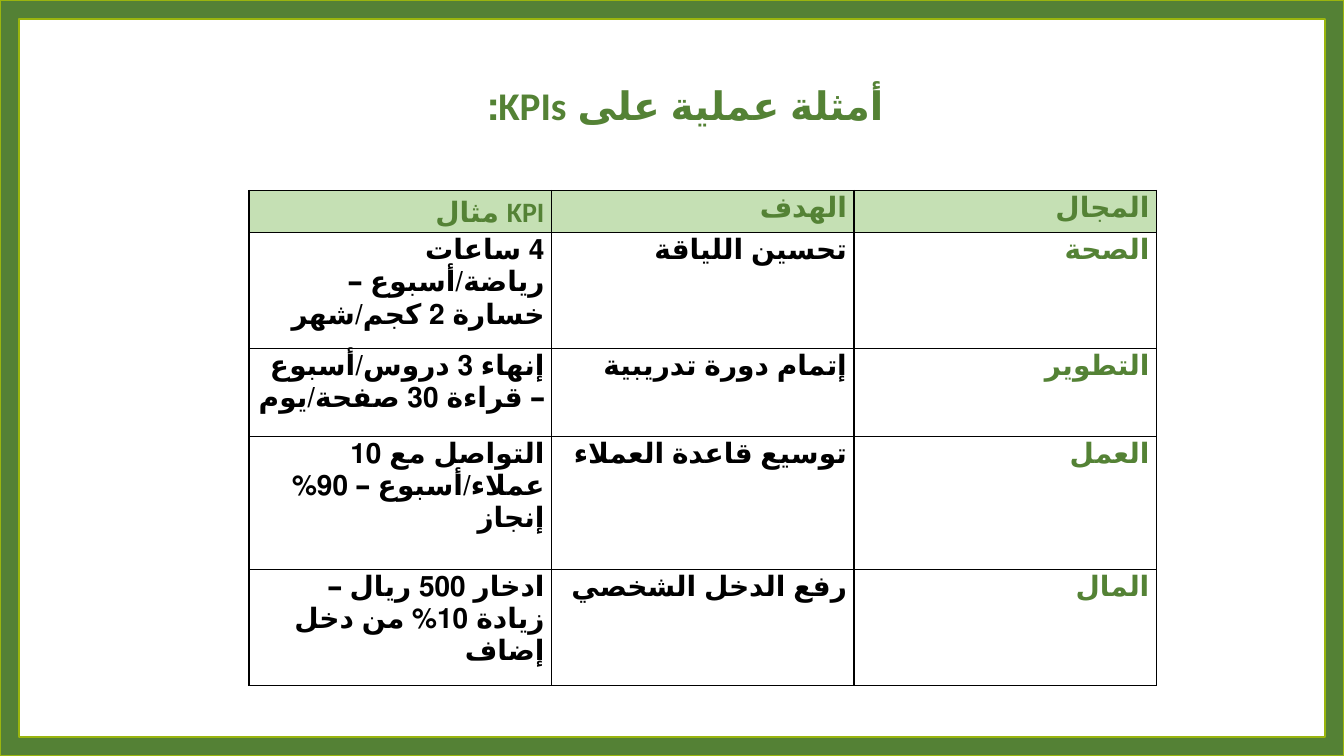
"""Build a slide with a table of practical KPI examples."""
from dataclasses import dataclass

from lxml.etree import SubElement
from pptx import Presentation
from pptx.dml.color import RGBColor
from pptx.enum.lang import MSO_LANGUAGE_ID
from pptx.enum.shapes import MSO_SHAPE
from pptx.enum.text import MSO_AUTO_SIZE, PP_ALIGN
from pptx.oxml.ns import qn
from pptx.util import Inches, Pt

GREEN = RGBColor(0x54, 0x82, 0x35)
FRAME_GREEN = RGBColor(0x54, 0x81, 0x35)
FRAME_LINE = RGBColor(0x9A, 0xB5, 0x0E)
HEADER_FILL = RGBColor(0xC5, 0xE0, 0xB4)
BLACK = RGBColor(0, 0, 0)
LATIN_FONT = "Calibri"
COLUMN_WIDTH = 3


@dataclass(frozen=True)
class KpiRow:
    example: str
    goal: str
    area: str
    height: float


HEADER = KpiRow("KPI مثال", "الهدف", "المجال", 0.42)
ROWS = [
    HEADER,
    KpiRow("4 ساعات رياضة/أسبوع – خسارة 2 كجم/شهر", "تحسين اللياقة", "الصحة", 1.15),
    KpiRow("إنهاء 3 دروس/أسبوع – قراءة 30 صفحة/يوم", "إتمام دورة تدريبية", "التطوير", 0.87),
    KpiRow("التواصل مع 10 عملاء/أسبوع – 90% إنجاز", "توسيع قاعدة العملاء", "العمل", 1.32),
    KpiRow("ادخار 500 ريال – زيادة 10% من دخل إضاف", "رفع الدخل الشخصي", "المال", 1.15),
]


def write_arabic(text_frame, text: str, size: float, color: RGBColor) -> None:
    paragraph = text_frame.paragraphs[0]
    paragraph.alignment = PP_ALIGN.RIGHT
    paragraph.line_spacing = 1.15
    paragraph.space_after = Pt(8)
    paragraph._p.get_or_add_pPr().set("rtl", "1")
    run = paragraph.add_run()
    run.text = text
    run.font.size = Pt(size)
    run.font.bold = True
    run.font.name = LATIN_FONT
    run.font.color.rgb = color
    run.font.language_id = MSO_LANGUAGE_ID.ARABIC


def add_borders(cell) -> None:
    properties = cell._tc.get_or_add_tcPr()
    for side in ("lnL", "lnR", "lnT", "lnB"):
        line = SubElement(properties, qn(f"a:{side}"), w=str(Pt(1)))
        fill = SubElement(line, qn("a:solidFill"))
        SubElement(fill, qn("a:srgbClr"), val=str(BLACK))


def fill_cell(cell, text: str, color: RGBColor, is_header: bool) -> None:
    cell.margin_left = cell.margin_right = Inches(0.07)
    cell.margin_top = cell.margin_bottom = 0
    add_borders(cell)
    if is_header:
        cell.fill.solid()
        cell.fill.fore_color.rgb = HEADER_FILL
    else:
        cell.fill.background()
    write_arabic(cell.text_frame, text, 20, color)


def add_frame(slide, width: int, height: int) -> None:
    frame = slide.shapes.add_shape(MSO_SHAPE.FRAME, 0, 0, width, height)
    frame.adjustments[0] = 0.025
    frame.shadow.inherit = False
    frame.fill.solid()
    frame.fill.fore_color.rgb = FRAME_GREEN
    frame.line.color.rgb = FRAME_LINE
    frame.line.width = Pt(1)


def add_kpi_table(slide) -> None:
    table = slide.shapes.add_table(
        len(ROWS), 3, Inches(2.47), Inches(1.89),
        Inches(3 * COLUMN_WIDTH), Inches(sum(row.height for row in ROWS)),
    ).table
    table.first_row = table.horz_banding = False
    for column in table.columns:
        column.width = Inches(COLUMN_WIDTH)
    for index, row in enumerate(ROWS):
        table.rows[index].height = Inches(row.height)
        is_header = row is HEADER
        body_color = GREEN if is_header else BLACK
        fill_cell(table.cell(index, 0), row.example, body_color, is_header)
        fill_cell(table.cell(index, 1), row.goal, body_color, is_header)
        fill_cell(table.cell(index, 2), row.area, GREEN, is_header)


def add_title(slide) -> None:
    title = slide.shapes.add_textbox(Inches(2.19), Inches(0.69), Inches(6.67), Inches(0.61))
    title.text_frame.word_wrap = True
    title.text_frame.auto_size = MSO_AUTO_SIZE.SHAPE_TO_FIT_TEXT
    write_arabic(title.text_frame, "أمثلة عملية على KPIs:", 28, GREEN)


def main() -> None:
    presentation = Presentation()
    presentation.slide_width = Inches(13.33)
    presentation.slide_height = Inches(7.5)
    slide = presentation.slides.add_slide(presentation.slide_layouts[6])
    add_frame(slide, presentation.slide_width, presentation.slide_height)
    add_kpi_table(slide)
    add_title(slide)
    presentation.save("out.pptx")


if __name__ == "__main__":
    main()
